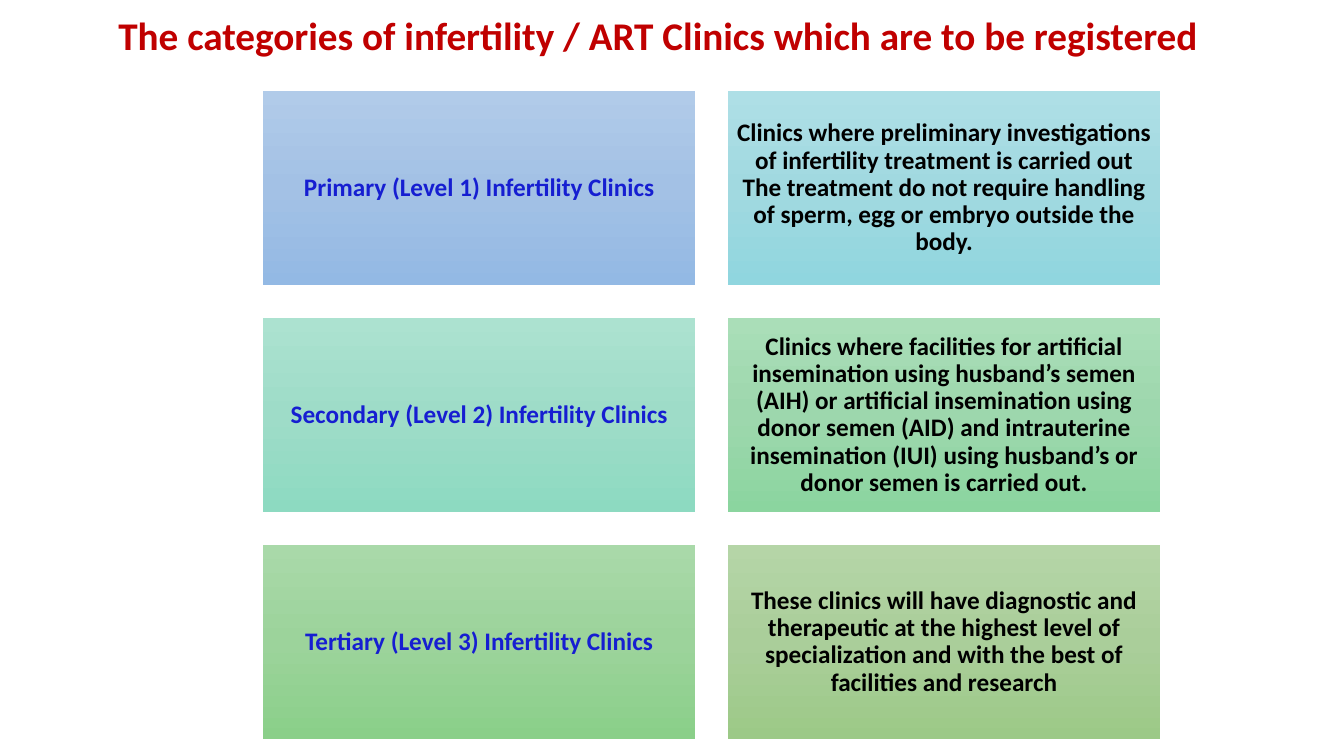
from copy import deepcopy
from dataclasses import dataclass

from pptx import Presentation
from pptx.dml.color import RGBColor
from pptx.enum.shapes import MSO_SHAPE
from pptx.enum.text import MSO_ANCHOR, MSO_AUTO_SIZE, PP_ALIGN
from pptx.oxml.ns import qn
from pptx.util import Cm, Pt


@dataclass(frozen=True)
class Theme:
    font: str = "Calibri"
    title_size: int = 28
    body_size: int = 18
    title_color: str = "C00000"
    level_color: str = "161ED1"
    description_color: str = "000000"


THEME = Theme()

TITLE = "The categories of infertility / ART Clinics which are to be registered"

# Each row: (level, its gradient), (description, its gradient)
CLINICS = [
    (
        ("Primary (Level 1) Infertility Clinics", ("B1CBE9", "A3C1E5", "93B9E4")),
        ("Clinics where preliminary investigations of infertility treatment is carried out "
         "The treatment do not require handling of sperm, egg or embryo outside the body.",
         ("AEDFE6", "A1D9E0", "90D6DF")),
    ),
    (
        ("Secondary (Level 2) Infertility Clinics", ("ACE2D0", "9EDCC8", "8DDAC1")),
        ("Clinics where facilities for artificial insemination using husband’s semen (AIH) "
         "or artificial insemination using donor semen (AID) and intrauterine insemination "
         "(IUI) using husband’s or donor semen is carried out.",
         ("AADEB8", "9DD7AD", "8BD59F")),
    ),
    (
        ("Tertiary (Level 3) Infertility Clinics", ("A9D9A9", "9CD39B", "8ACF89")),
        ("These clinics will have diagnostic and therapeutic at the highest level of "
         "specialization and with the best of facilities and research",
         ("B5D5A7", "AACE9A", "9CC987")),
    ),
]


def write_text(text_frame, text, *, size, color, anchor, line_spacing=1.0):
    """Fill the frame with one bold centred paragraph."""
    text_frame.word_wrap = True
    text_frame.vertical_anchor = anchor
    paragraph = text_frame.paragraphs[0]
    paragraph.alignment = PP_ALIGN.CENTER
    paragraph.line_spacing = line_spacing
    run = paragraph.add_run()
    run.text = text
    run.font.name = THEME.font
    run.font.size = Pt(size)
    run.font.bold = True
    run.font.color.rgb = RGBColor.from_string(color)


def fill_downwards(shape, colors):
    """Give the shape a three-stop gradient from top to bottom."""
    shape.fill.gradient()
    shape.fill.gradient_angle = 270
    stop_list = shape._element.spPr.find(qn("a:gradFill")).find(qn("a:gsLst"))
    stop_list.insert(1, deepcopy(stop_list[0]))
    for stop, position, color in zip(shape.fill.gradient_stops, (0, 0.5, 1), colors):
        stop.position = position
        stop.color.rgb = RGBColor.from_string(color)


def place_title(slide, left, top, width, height):
    title = slide.shapes.title
    title.left, title.top, title.width, title.height = left, top, width, height
    text_frame = title.text_frame
    write_text(text_frame, TITLE, size=THEME.title_size, color=THEME.title_color,
               anchor=MSO_ANCHOR.TOP)
    text_frame.auto_size = MSO_AUTO_SIZE.SHAPE_TO_FIT_TEXT
    text_frame.margin_right = Cm(0.97)


def add_card(slide, text, gradient, color, left, top, width, height):
    card = slide.shapes.add_shape(MSO_SHAPE.RECTANGLE, left, top, width, height)
    card.shadow.inherit = False
    card.line.fill.background()
    fill_downwards(card, gradient)
    text_frame = card.text_frame
    text_frame.margin_left = text_frame.margin_right = Cm(0.18)
    text_frame.margin_top = text_frame.margin_bottom = Cm(0.18)
    write_text(text_frame, text, size=THEME.body_size, color=color,
               anchor=MSO_ANCHOR.MIDDLE, line_spacing=0.9)


def add_clinic_grid(slide, left, top, width, height, gap):
    """Place one row per clinic level: its name, then its description."""
    colors = (THEME.level_color, THEME.description_color)
    card_width = (width - gap) // 2
    card_height = (height - gap * (len(CLINICS) - 1)) // len(CLINICS)
    for row, cards in enumerate(CLINICS):
        for column, ((text, gradient), color) in enumerate(zip(cards, colors)):
            add_card(slide, text, gradient, color,
                     left + column * (card_width + gap),
                     top + row * (card_height + gap),
                     card_width, card_height)


def main():
    presentation = Presentation()
    presentation.slide_width = Cm(33.87)
    presentation.slide_height = Cm(19.05)
    slide = presentation.slides.add_slide(presentation.slide_layouts.get_by_name("Title Only"))
    place_title(slide, 0, Cm(0.15), presentation.slide_width, Cm(1.45))
    add_clinic_grid(slide, Cm(6.63), Cm(2.29), Cm(22.61), Cm(16.34), Cm(0.82))
    presentation.save("out.pptx")


if __name__ == "__main__":
    main()
